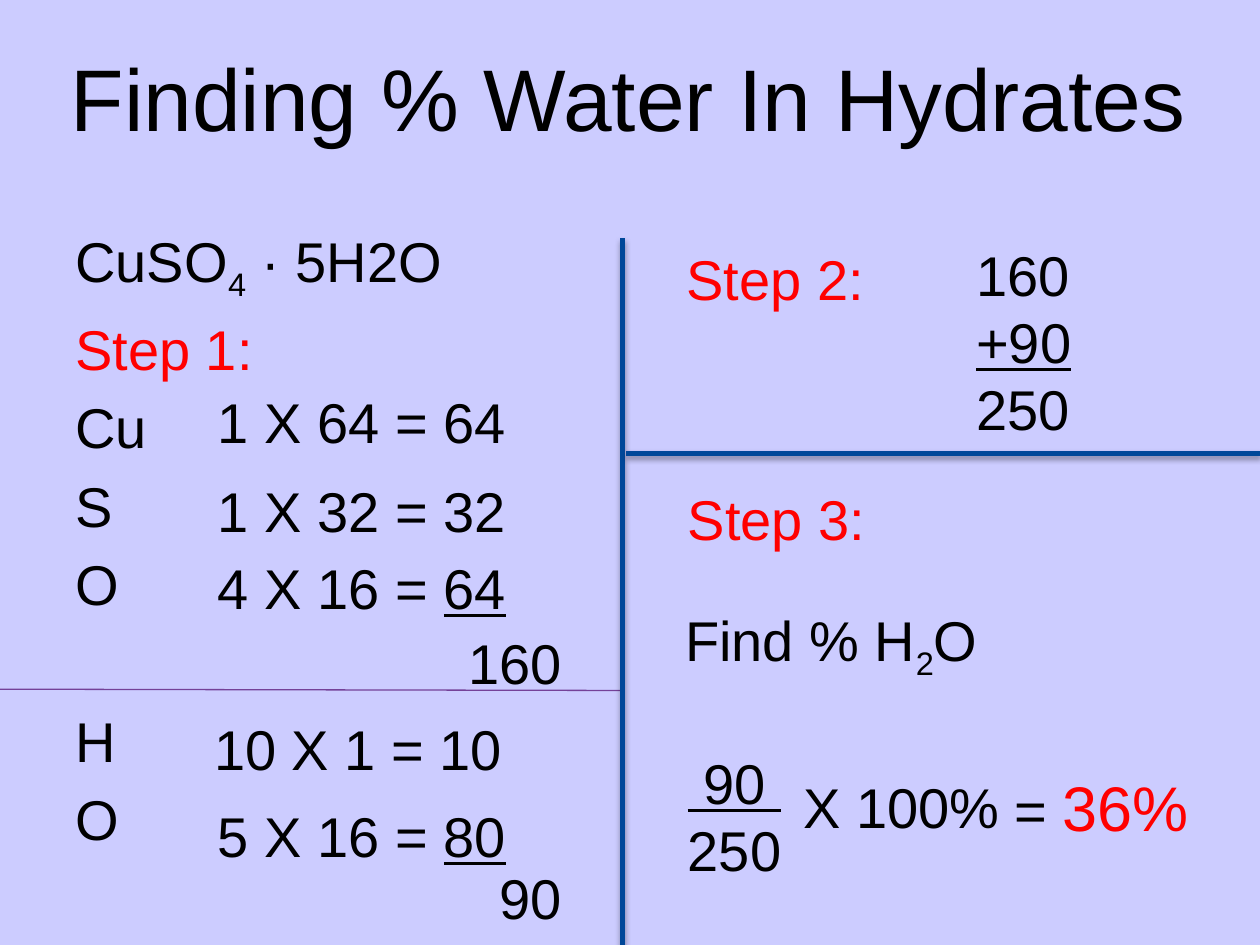
import pptx
import pptx.dml.color
import pptx.enum.shapes
import pptx.enum.text
import pptx.oxml
import pptx.oxml.ns
import pptx.util
from pptx.util import Inches

COLORS = {
    "background": "CCCCFF",
    "text": "000000",
    "accent": "FF0000",
    "divider": "004799",
    "rule": "744198",
}
NS = pptx.oxml.ns.nsdecls("a")
SHADOW = (
    f'<a:effectLst {NS}><a:outerShdw blurRad="39370" dist="22860" dir="5400000" '
    'rotWithShape="0"><a:srgbClr val="000000"><a:alpha val="35000"/></a:srgbClr>'
    "</a:outerShdw></a:effectLst>"
)
NO_EFFECT = f"<a:effectLst {NS}/>"


def rgb(name):
    return pptx.dml.color.RGBColor.from_string(COLORS[name])


def add_run(p, text, color="text", size=32, underline=False, subscript=False):
    r = p.add_run()
    r.text = text
    r.font.name = "Arial"
    r.font.size = pptx.util.Pt(size)
    r.font.color.rgb = rgb(color)
    if underline:
        r.font.underline = True
    if subscript:
        r.font._element.set("baseline", "-25000")


def add_text(s, left, top, width, height, lines, wrap=True):
    sp = s.shapes.add_textbox(left, top, width, height)
    tf = sp.text_frame
    tf.word_wrap = wrap
    for i, line in enumerate(lines):
        p = tf.paragraphs[0] if i == 0 else tf.add_paragraph()
        for text, style in line:
            add_run(p, text, **style)
    return tf


def add_line(s, x1, y1, x2, y2, color, width, effect=NO_EFFECT):
    sp = s.shapes.add_connector(
        pptx.enum.shapes.MSO_CONNECTOR.STRAIGHT, x1, y1, x2, y2)
    sp.line.color.rgb = rgb(color)
    sp.line.width = pptx.util.Pt(width)
    sp._element.spPr.append(pptx.oxml.parse_xml(effect))


def add_title(s, left, top, width, height):
    line = [("Finding % Water In Hydrates", {"size": 50})]
    tf = add_text(s, left, top, width, height, [line])
    tf.vertical_anchor = pptx.enum.text.MSO_ANCHOR.BOTTOM
    tf.paragraphs[0].alignment = pptx.enum.text.PP_ALIGN.CENTER


def add_masses(s, left, top, width, height):
    formula = [("CuSO", {}), ("4", {"subscript": True}), (" · 5H2O", {})]
    labels = ["Cu", "S", "O", "\t160", "H", "O", "\t90"]
    lines = [formula, [("Step 1:", {"color": "accent"})]]
    lines += [[(label, {})] for label in labels]
    tf = add_text(s, left, top, width, height, lines)
    for p in tf.paragraphs[1:]:
        p.space_before = pptx.util.Pt(6.4)
        if p.text.startswith("\t"):
            p._p.get_or_add_pPr().append(pptx.oxml.parse_xml(
                f'<a:tabLst {NS}><a:tab pos="{Inches(3.86)}" algn="r"/></a:tabLst>'))

    products = [
        (1.13, 1.28, "1 X 64 = ", "64", False),
        (1.13, 1.98, "1 X 32 = ", "32", False),
        (1.13, 2.59, "4 X 16 = ", "64", True),
        (1.1, 3.87, "10 X 1 = ", "10", False),
        (1.13, 4.56, "5 X 16 = ", "80", True),
    ]
    for dx, dy, product, result, last in products:
        add_text(s, left + Inches(dx), top + Inches(dy), Inches(2.51), Inches(0.64),
                 [[(product, {}), (result, {"underline": last})]], wrap=False)


def add_step_label(s, left, top, text):
    add_text(s, left, top, Inches(1.62), Inches(0.64),
             [[(text, {"color": "accent"})]], wrap=False)


def add_total(s, left, top):
    add_step_label(s, left, top, "Step 2:")
    add_text(s, left + Inches(2.3), top - Inches(0.03), Inches(1.14), Inches(1.72),
             [[("160", {})], [("+90", {"underline": True})], [("250", {})]])


def add_percentage(s, left, top):
    add_step_label(s, left, top, "Step 3:")
    parts = [
        (-0.02, 0.96, 4.11, 0.64,
         [[("Find % H", {}), ("2", {"subscript": True}), ("O", {})]]),
        (0, 2.09, 0.95, 1.18, [[(" 90 ", {"underline": True})], [("250", {})]]),
        (0.92, 2.28, 1.78, 0.64, [[("X 100%", {})]]),
        (2.59, 2.25, 1.78, 0.71,
         [[("= ", {}), ("36%", {"color": "accent", "size": 36})]]),
    ]
    for dx, dy, width, height, lines in parts:
        add_text(s, left + Inches(dx), top + Inches(dy),
                 Inches(width), Inches(height), lines)


def add_dividers(s, left, top, right, bottom):
    middle = left + Inches(4.94)
    add_line(s, left, Inches(5.47), middle, Inches(5.48), "rule", 0.75)
    add_line(s, middle, bottom, middle, top, "divider", 3, SHADOW)
    add_line(s, middle + Inches(0.03), Inches(3.6), right, Inches(3.6),
             "divider", 3, SHADOW)


def main():
    prs = pptx.Presentation()
    prs.slide_width = Inches(10)
    prs.slide_height = Inches(7.5)
    s = prs.slides.add_slide(prs.slide_layouts[6])
    s.background.fill.solid()
    s.background.fill.fore_color.rgb = rgb("background")
    add_title(s, Inches(0.19), Inches(0.21), Inches(9.6), Inches(1.02))
    add_masses(s, Inches(0.5), Inches(1.75), Inches(9), Inches(5.75))
    add_dividers(s, 0, Inches(1.89), prs.slide_width, prs.slide_height)
    add_total(s, Inches(5.35), Inches(1.89))
    add_percentage(s, Inches(5.36), Inches(3.8))
    prs.save("out.pptx")


if __name__ == "__main__":
    main()
